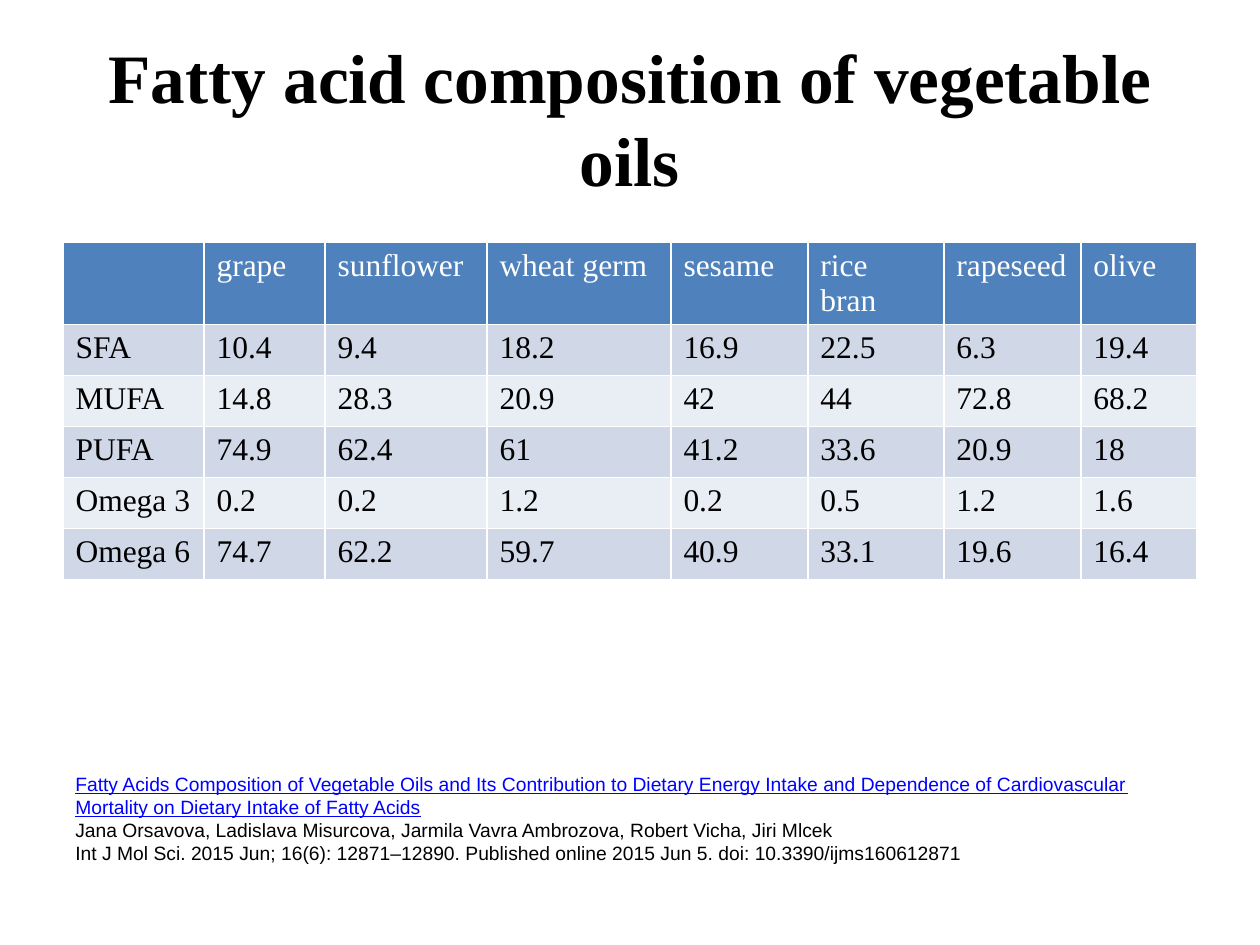
from pptx import Presentation
from pptx import util as u
from pptx.dml.color import RGBColor
from pptx.enum import text as t

# Content
TITLE = "Fatty acid composition of vegetable oils"
ROWS = [
    ("", "grape", "sunflower", "wheat germ", "sesame", "rice bran", "rapeseed", "olive"),
    ("SFA", "10.4", "9.4", "18.2", "16.9", "22.5", "6.3", "19.4"),
    ("MUFA", "14.8", "28.3", "20.9", "42", "44", "72.8", "68.2"),
    ("PUFA", "74.9", "62.4", "61", "41.2", "33.6", "20.9", "18"),
    ("Omega 3", "0.2", "0.2", "1.2", "0.2", "0.5", "1.2", "1.6"),
    ("Omega 6", "74.7", "62.2", "59.7", "40.9", "33.1", "19.6", "16.4"),
]
SOURCE = [
    ("Fatty Acids Composition of Vegetable Oils and Its Contribution to Dietary "
     "Energy Intake and Dependence of Cardiovascular Mortality on Dietary Intake "
     "of Fatty Acids", "link"),
    ("Jana Orsavova, Ladislava Misurcova, Jarmila Vavra Ambrozova, Robert Vicha, "
     "Jiri Mlcek", "ink"),
    ("Int J Mol Sci. 2015 Jun; 16(6): 12871–12890. Published online 2015 Jun 5. "
     "doi: 10.3390/ijms160612871", "ink"),
]

# Look and measures
HUES = {"ink": "000000", "link": "0000FF", "white": "FFFFFF",
        "head": "4F81BD", "odd": "D0D8E8", "even": "E9EDF4"}
SERIF, SANS = "Times New Roman", "Arial"
PX = u.Inches(1) / 126
LEFT, WIDE = 63, 1134
COLS = [141, 121, 162, 184, 137, 136, 137, 116]
ROW = 51


def px(n):
    return u.Emu(round(n * PX))


def hue(name):
    return RGBColor.from_string(HUES[name])


def style(para, face, size, name, bold=False):
    font = para.font
    font.name, font.size, font.bold = face, u.Pt(size), bold
    font.color.rgb = hue(name)


deck = Presentation()
deck.slide_width, deck.slide_height = px(1260), px(945)
slide = deck.slides.add_slide(deck.slide_layouts[5])

# Title
title = slide.shapes.title
title.left, title.top, title.width, title.height = map(px, (LEFT, 38, WIDE, 158))
frame = title.text_frame
frame.text = TITLE
frame.vertical_anchor = t.MSO_ANCHOR.MIDDLE
frame.paragraphs[0].alignment = t.PP_ALIGN.CENTER
style(frame.paragraphs[0], SERIF, 39.6, "ink", True)

# Table: the default style draws the white rules
box = map(px, (LEFT, 242, WIDE, ROW * len(ROWS)))
table = slide.shapes.add_table(len(ROWS), len(COLS), *box).table
for col, wide in zip(table.columns, COLS):
    col.width = px(wide)
for r, row in enumerate(ROWS):
    table.rows[r].height = px(ROW)
    fill = "head" if r == 0 else "odd" if r % 2 else "even"
    for c, word in enumerate(row):
        cell = table.cell(r, c)
        cell.text = word
        cell.fill.solid()
        cell.fill.fore_color.rgb = hue(fill)
        style(cell.text_frame.paragraphs[0], SERIF, 18, "ink" if r else "white")

# Source
note = slide.shapes.add_textbox(*map(px, (LEFT, 766, WIDE, 106))).text_frame
note.word_wrap = True
note.text = "\n".join(line for line, _ in SOURCE)
for para, (_, name) in zip(note.paragraphs, SOURCE):
    style(para, SANS, 11, name)
    para.font.underline = name == "link"

deck.save("out.pptx")
